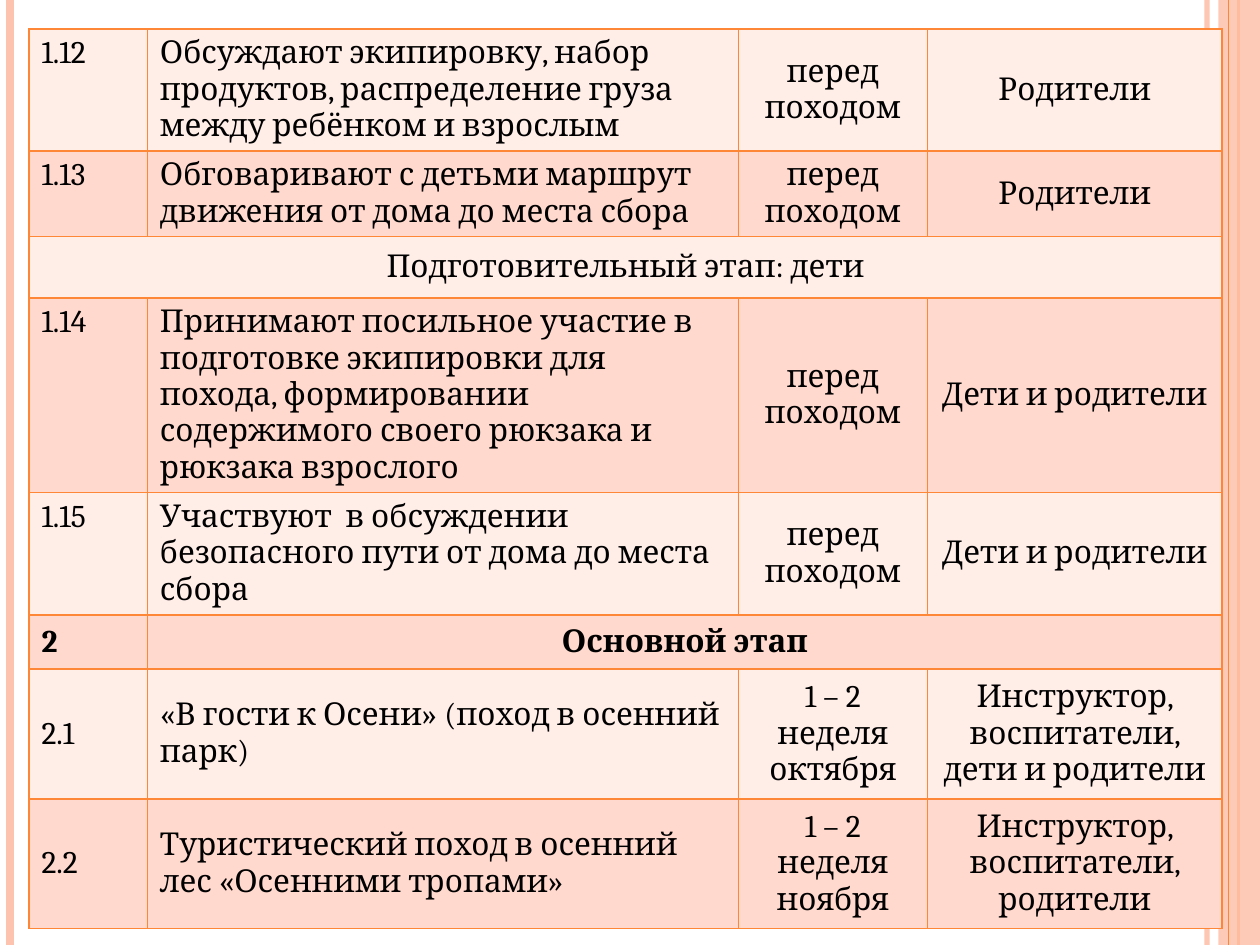
from lxml import etree
from pptx import Presentation
from pptx import util as u
from pptx.dml.color import RGBColor
from pptx.enum import shapes, text
from pptx.oxml.ns import qn

ORANGE = RGBColor(0xFE, 0x86, 0x37)
PEACH = RGBColor(0xFE, 0xC3, 0xAE)
BLACK = RGBColor(0, 0, 0)
BANDS = RGBColor(0xFF, 0xED, 0xE8), RGBColor(0xFF, 0xD9, 0xCE)

FONT = {"name": "Cambria", "size": u.Pt(18), "bold": False}
COLS = 0.94, 4.69, 1.5, 2.34
# Height, then the cells; None continues the merged cell on its left.
ROWS = [
    (0.97, ["1.12", "Обсуждают экипировку, набор продуктов, распределение груза "
            "между ребёнком и взрослым", "перед походом", "Родители"]),
    (0.67, ["1.13", "Обговаривают с детьми маршрут движения от дома до места сбора",
            "перед походом", "Родители"]),
    (0.49, ["Подготовительный этап: дети", None, None, None]),
    (1.54, ["1.14", "Принимают посильное участие в подготовке экипировки для похода, "
            "формировании содержимого своего рюкзака и рюкзака взрослого",
            "перед походом", "Дети и родители"]),
    (0.97, ["1.15", "Участвуют  в обсуждении безопасного пути от дома до места сбора",
            "перед походом", "Дети и родители"]),
    (0.43, ["2", "Основной этап", None, None]),
    (1.03, ["2.1", "«В гости к Осени» (поход в осенний парк)",
            "1 – 2 неделя октября", "Инструктор, воспитатели, дети и родители"]),
    (1.03, ["2.2", "Туристический поход в осенний лес «Осенними тропами»",
            "1 – 2 неделя ноября", "Инструктор, воспитатели, родители"]),
]


def fade(part, pct):
    """Make a solid fill or line partly transparent."""
    clr = next(part.iter(qn("a:srgbClr")))
    etree.SubElement(clr, qn("a:alpha"), val=str(pct * 1000))


def stripe(slide, x, color, width, pct=100):
    """Draw a vertical line over the full slide height."""
    line = slide.shapes.add_connector(
        shapes.MSO_CONNECTOR.STRAIGHT, u.Inches(x), 0, u.Inches(x), u.Inches(7.5))
    line.line.color.rgb = color
    line.line.width = u.Pt(width)
    props = line._element.spPr
    if pct < 100:
        fade(props, pct)
    etree.SubElement(props, qn("a:effectLst"))


def band(slide):
    """Draw the wide translucent band on the right edge."""
    box = slide.shapes.add_shape(
        shapes.MSO_SHAPE.RECTANGLE, u.Inches(9.67), 0, u.Inches(0.33), u.Inches(7.5))
    box.shadow.inherit = False
    box.fill.solid()
    box.fill.fore_color.rgb = PEACH
    box.line.fill.background()
    fade(box._element.spPr, 87)


def edge(cell):
    """Put a thin orange border on all four sides, ahead of the fill."""
    props = cell._tc.get_or_add_tcPr()
    for i, side in enumerate(("lnL", "lnR", "lnT", "lnB")):
        line = etree.Element(qn(f"a:{side}"), w=str(u.Pt(1)))
        fill = etree.SubElement(line, qn("a:solidFill"))
        etree.SubElement(fill, qn("a:srgbClr"), val=str(ORANGE))
        props.insert(i, line)


def write(cell, words, center, middle, bold):
    cell.text = words
    if middle:
        cell.vertical_anchor = text.MSO_ANCHOR.MIDDLE
    para = cell.text_frame.paragraphs[0]
    if center:
        para.alignment = text.PP_ALIGN.CENTER
    font = para.runs[0].font
    for key, val in {**FONT, "bold": bold}.items():
        setattr(font, key, val)
    font.color.rgb = BLACK


def plan(slide):
    """Build the table of stages."""
    tall = sum(height for height, _ in ROWS)
    table = slide.shapes.add_table(
        len(ROWS), len(COLS), u.Inches(0.23), u.Inches(0.23),
        u.Inches(sum(COLS)), u.Inches(tall)).table
    table.first_row = table.horz_banding = False
    for col, width in zip(table.columns, COLS):
        col.width = u.Inches(width)
    for r, (height, cells) in enumerate(ROWS):
        table.rows[r].height = u.Inches(height)
        head = None in cells
        last = len(COLS) - 1
        if head:
            start = cells.index(None) - 1
            table.cell(r, start).merge(table.cell(r, last))
        for c, words in enumerate(cells):
            cell = table.cell(r, c)
            cell.fill.solid()
            cell.fill.fore_color.rgb = BANDS[r % 2]
            edge(cell)
            if words:
                center = c > 1 or head and c == start
                middle = center or r > 4
                write(cell, words, center, middle, cells[0] == "2")


def main():
    deck = Presentation()
    deck.slide_width, deck.slide_height = u.Inches(10), u.Inches(7.5)
    slide = deck.slides.add_slide(deck.slide_layouts[6])
    stripe(slide, 9.58, PEACH, 3, 93)
    stripe(slide, 0.08, PEACH, 4.5)
    stripe(slide, 9.83, ORANGE, 1.5)
    band(slide)
    stripe(slide, 9.75, ORANGE, 0.75)
    plan(slide)
    deck.save("out.pptx")


if __name__ == "__main__":
    main()
